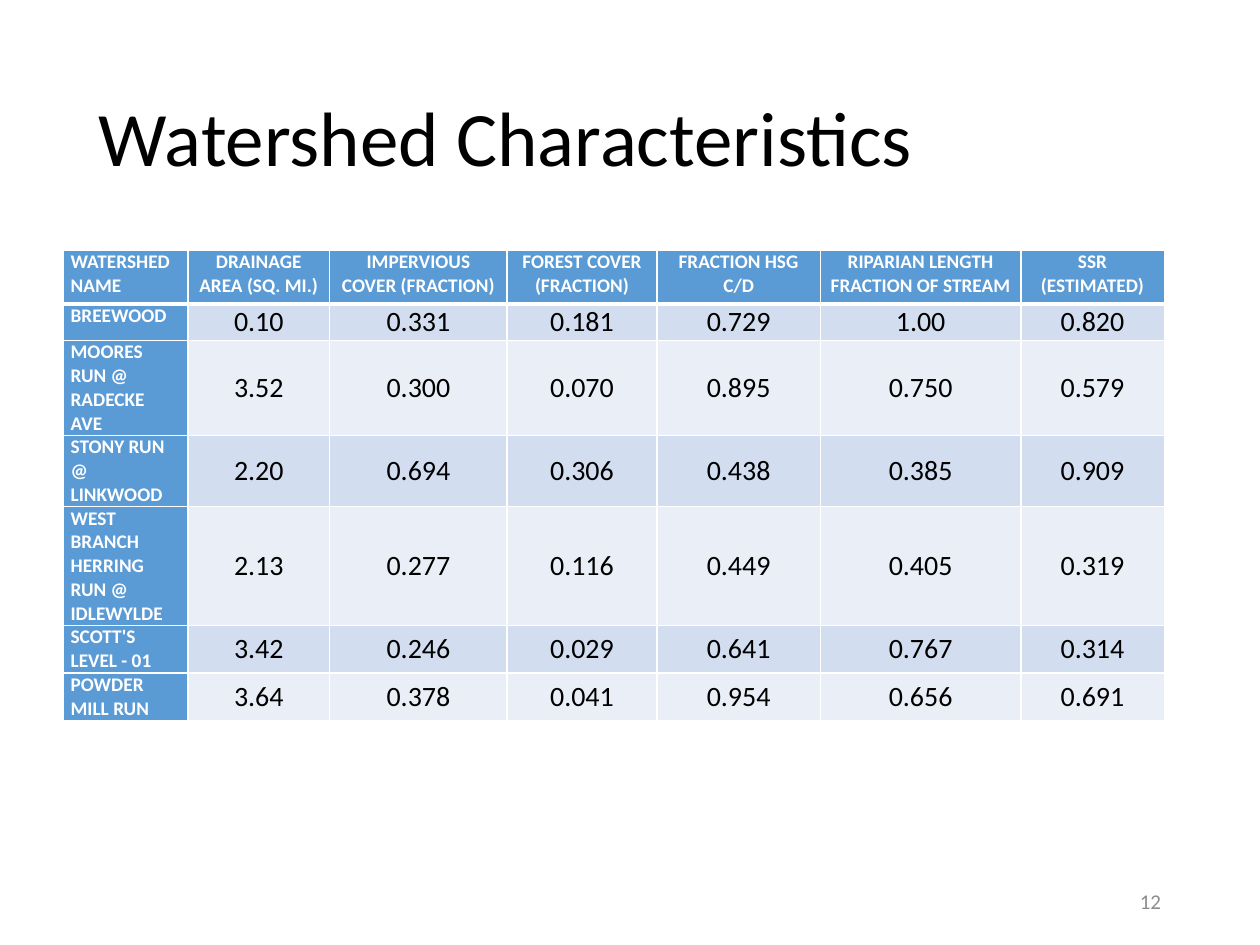
"""Build the Watershed Characteristics slide."""
import pptx
import pptx.dml.color
import pptx.enum.text
import pptx.oxml
import pptx.oxml.ns
import pptx.util

Pt = pptx.util.Pt
RGBColor = pptx.dml.color.RGBColor
ALIGN = pptx.enum.text.PP_ALIGN
MIDDLE = pptx.enum.text.MSO_ANCHOR.MIDDLE

WHITE = RGBColor(0xFF, 0xFF, 0xFF)
BLACK = RGBColor(0x00, 0x00, 0x00)
GRAY = RGBColor(0x8C, 0x8C, 0x8C)
BLUE = RGBColor(0x5B, 0x9B, 0xD5)
BANDS = [RGBColor(0xEA, 0xEF, 0xF7), RGBColor(0xD2, 0xDE, 0xEF)]

ROWS = [
    ["WATERSHED NAME", "DRAINAGE AREA (SQ. MI.)", "IMPERVIOUS COVER (FRACTION)",
     "FOREST COVER (FRACTION)", "FRACTION HSG C/D",
     "RIPARIAN LENGTH FRACTION OF STREAM", "SSR (ESTIMATED)"],
    ["BREEWOOD", "0.10", "0.331", "0.181", "0.729", "1.00", "0.820"],
    ["MOORES RUN @ RADECKE AVE", "3.52", "0.300", "0.070", "0.895", "0.750", "0.579"],
    ["STONY RUN @ LINKWOOD", "2.20", "0.694", "0.306", "0.438", "0.385", "0.909"],
    ["WEST BRANCH HERRING RUN @ IDLEWYLDE", "2.13", "0.277", "0.116", "0.449",
     "0.405", "0.319"],
    ["SCOTT'S LEVEL - 01", "3.42", "0.246", "0.029", "0.641", "0.767", "0.314"],
    ["POWDER MILL RUN", "3.64", "0.378", "0.041", "0.954", "0.656", "0.691"],
]
WIDTHS = [71.5, 81, 101.5, 85.5, 93.5, 114.5, 82]
HEIGHTS = [31, 20.75, 54.25, 40.75, 68, 27.25, 27.25]


def style(para, size, color, align, bold=False):
    para.font.name = "Calibri"
    para.font.size = Pt(size)
    para.font.bold = bold
    para.font.color.rgb = color
    para.alignment = align


def border(cell, side, width):
    space = pptx.oxml.ns.nsdecls("a")
    cell._tc.get_or_add_tcPr().append(pptx.oxml.parse_xml(
        f'<a:ln{side} {space} w="{Pt(width)}"><a:solidFill>'
        f'<a:srgbClr val="{WHITE}"/></a:solidFill></a:ln{side}>'))


deck = pptx.Presentation()
deck.slide_width, deck.slide_height = Pt(720), Pt(540)
slide = deck.slides.add_slide(deck.slide_layouts[6])

for text, box, size, color, align, lead in [
    ("Watershed Characteristics", (49.5, 28.75, 621, 104.5), 44, BLACK, ALIGN.LEFT, 0.9),
    ("12", (508.5, 500.5, 162, 28.75), 12, GRAY, ALIGN.RIGHT, 1.0),
]:
    frame = slide.shapes.add_textbox(*map(Pt, box)).text_frame
    frame.word_wrap = True
    frame.vertical_anchor = MIDDLE
    para = frame.paragraphs[0]
    para.text = text
    para.line_spacing = lead
    style(para, size, color, align)

table = slide.shapes.add_table(
    len(ROWS), len(WIDTHS), Pt(35.9), Pt(142.75),
    Pt(sum(WIDTHS)), Pt(sum(HEIGHTS))).table
for col, width in zip(table.columns, WIDTHS):
    col.width = Pt(width)
for row, height in zip(table.rows, HEIGHTS):
    row.height = Pt(height)

for r, texts in enumerate(ROWS):
    for c, text in enumerate(texts):
        cell = table.cell(r, c)
        head = r == 0 or c == 0
        cell.text = text
        cell.margin_left = cell.margin_right = Pt(4.5)
        cell.margin_top = cell.margin_bottom = 0
        align = ALIGN.CENTER if c else ALIGN.LEFT
        para = cell.text_frame.paragraphs[0]
        if head:
            style(para, 11, WHITE, align, True)
        else:
            style(para, 16, BLACK, align)
            cell.vertical_anchor = MIDDLE
        border(cell, "L", 1)
        border(cell, "R", 1)
        border(cell, "T", 3 if r == 1 else 1)
        border(cell, "B", 3 if r == 0 else 1)
        cell.fill.solid()
        cell.fill.fore_color.rgb = BLUE if head else BANDS[r % 2]

deck.save("out.pptx")
